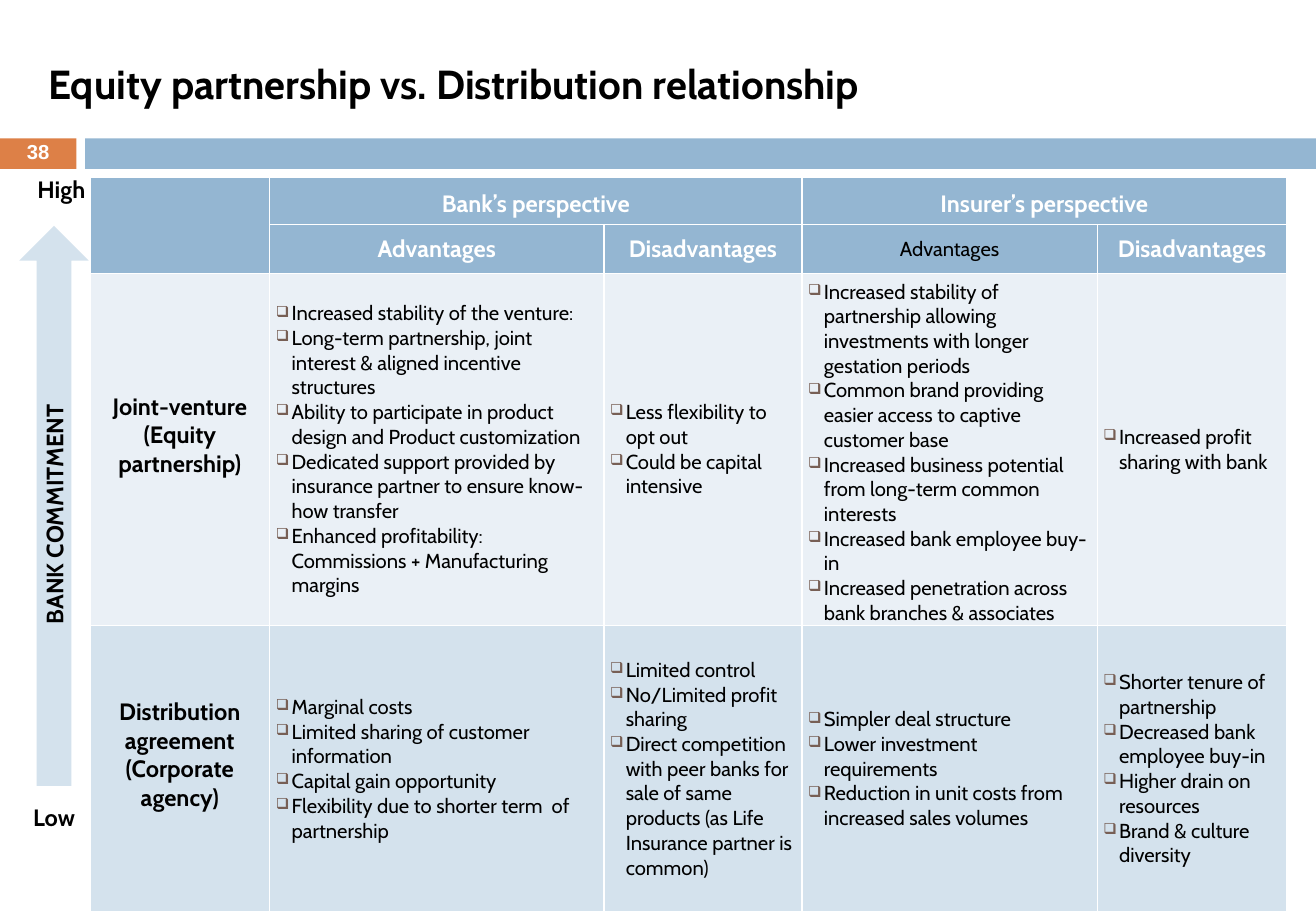
from lxml import etree
from pptx import Presentation
from pptx.dml.color import RGBColor
from pptx.enum.shapes import MSO_SHAPE
from pptx.enum.text import MSO_ANCHOR, PP_ALIGN
from pptx.oxml.ns import qn
from pptx.util import Inches, Pt

LEFT, CENTER = PP_ALIGN.LEFT, PP_ALIGN.CENTER
TOP, MIDDLE, BOTTOM = MSO_ANCHOR.TOP, MSO_ANCHOR.MIDDLE, MSO_ANCHOR.BOTTOM
RECTANGLE, UP_ARROW = MSO_SHAPE.RECTANGLE, MSO_SHAPE.UP_ARROW

BLACK = RGBColor(0x00, 0x00, 0x00)
WHITE = RGBColor(0xFF, 0xFF, 0xFF)
ORANGE = RGBColor(0xDD, 0x80, 0x47)
BLUE = RGBColor(0x94, 0xB6, 0xD2)
LIGHT_BLUE = RGBColor(0xD4, 0xE2, 0xED)
PALE_BLUE = RGBColor(0xEA, 0xF0, 0xF6)
BROWN = RGBColor(0x77, 0x5F, 0x55)

SLIDE_WIDTH, SLIDE_HEIGHT = 10.83, 7.5
BAND_TOP, BAND_HEIGHT = 1.14, 0.25
NUMBER_WIDTH, BAND_LEFT = 0.63, 0.7
TABLE_LEFT, TABLE_TOP = 0.74, 1.46
COLUMNS = [1.48, 2.75, 1.63, 2.43, 1.56]
ROWS = [0.39, 0.39, 2.9, 2.36]
CELL_INSET = 0.05
LABEL_LIFT = 0.23

PERSPECTIVES = {1: "Bank’s perspective", 3: "Insurer’s perspective"}
ASPECTS = ["Advantages", "Disadvantages", "Advantages", "Disadvantages"]
PLAIN_ASPECT = 3
MODELS = [
    (PALE_BLUE, ["Joint-venture", "(Equity partnership)"], [
        ["Increased stability of the venture:",
         "Long-term partnership, joint interest & aligned incentive structures",
         "Ability to participate in product design and Product customization",
         "Dedicated support provided by insurance partner to ensure know-how transfer",
         "Enhanced profitability: Commissions + Manufacturing margins"],
        ["Less flexibility to opt out",
         "Could be capital intensive"],
        ["Increased stability of partnership allowing investments with longer gestation periods",
         "Common brand providing easier access to captive customer base",
         "Increased business potential from long-term common interests",
         "Increased bank employee buy-in",
         "Increased penetration across bank branches & associates"],
        ["Increased profit sharing with bank"],
    ]),
    (LIGHT_BLUE, ["Distribution agreement", "(Corporate agency)"], [
        ["Marginal costs",
         "Limited sharing of customer information",
         "Capital gain opportunity",
         "Flexibility due to shorter term  of partnership"],
        ["Limited control",
         "No/Limited profit sharing",
         "Direct competition with peer banks for sale of same products "
         "(as Life Insurance partner is common)"],
        ["Simpler deal structure",
         "Lower investment requirements",
         "Reduction in unit costs from increased sales volumes"],
        ["Shorter tenure of partnership",
         "Decreased bank employee buy-in",
         "Higher drain on resources",
         "Brand & culture diversity"],
    ]),
]


def add_bullet(paragraph):
    properties = paragraph._p.get_or_add_pPr()
    properties.set("marL", str(Inches(0.13)))
    properties.set("indent", str(-Inches(0.13)))
    color = etree.SubElement(properties, qn("a:buClr"))
    etree.SubElement(color, qn("a:srgbClr"), val=str(BROWN))
    etree.SubElement(properties, qn("a:buSzPct"), val="75000")
    etree.SubElement(properties, qn("a:buChar"), char="❑")


def write(frame, lines, size=14, color=BLACK, bold=True, align=CENTER,
          font="Cabin", bullets=False):
    """Fill a text frame with one paragraph for each line."""
    frame.word_wrap = True
    for index, line in enumerate(lines):
        paragraph = frame.add_paragraph() if index else frame.paragraphs[0]
        paragraph.alignment = align
        if bullets:
            add_bullet(paragraph)
        run = paragraph.add_run()
        run.text = line
        run.font.name = font
        run.font.size = Pt(size)
        run.font.bold = bold
        run.font.color.rgb = color


def add_text_box(slide, box, text, anchor=TOP, **text_format):
    frame = slide.shapes.add_textbox(*map(Inches, box)).text_frame
    frame.vertical_anchor = anchor
    write(frame, [text], **text_format)


def add_block(slide, kind, box, fill):
    block = slide.shapes.add_shape(kind, *map(Inches, box))
    block.shadow.inherit = False
    block.fill.solid()
    block.fill.fore_color.rgb = fill
    block.line.fill.background()
    return block


def style_cell(cell, fill):
    """Give a cell white borders, a fill and equal insets."""
    properties = cell._tc.get_or_add_tcPr()
    for side in ("a:lnL", "a:lnR", "a:lnT", "a:lnB"):
        border = etree.SubElement(properties, qn(side), w=str(Pt(1)))
        solid = etree.SubElement(border, qn("a:solidFill"))
        etree.SubElement(solid, qn("a:srgbClr"), val=str(WHITE))
    cell.fill.solid()
    cell.fill.fore_color.rgb = fill
    cell.margin_left = cell.margin_right = Inches(CELL_INSET)
    cell.margin_top = cell.margin_bottom = Inches(CELL_INSET)
    cell.vertical_anchor = MIDDLE


def add_comparison(slide):
    table = slide.shapes.add_table(
        len(ROWS), len(COLUMNS), Inches(TABLE_LEFT), Inches(TABLE_TOP),
        Inches(sum(COLUMNS)), Inches(sum(ROWS))).table
    table.first_row = table.horz_banding = False
    for column, width in zip(table.columns, COLUMNS):
        column.width = Inches(width)
    row_fills = [BLUE, BLUE] + [fill for fill, _, _ in MODELS]
    for index, (row, height) in enumerate(zip(table.rows, ROWS)):
        row.height = Inches(height)
        for cell in row.cells:
            style_cell(cell, row_fills[index])

    table.cell(0, 0).merge(table.cell(1, 0))
    for column, perspective in PERSPECTIVES.items():
        heading = table.cell(0, column)
        heading.merge(table.cell(0, column + 1))
        heading.vertical_anchor = BOTTOM
        write(heading.text_frame, [perspective], color=WHITE)
    for column, aspect in enumerate(ASPECTS, start=1):
        plain = column == PLAIN_ASPECT
        write(table.cell(1, column).text_frame, [aspect], bold=not plain,
              size=12 if plain else 14, color=BLACK if plain else WHITE)
    for row, (_, label, points) in enumerate(MODELS, start=2):
        label_cell = table.cell(row, 0)
        label_cell.margin_bottom = Inches(CELL_INSET + LABEL_LIFT)
        write(label_cell.text_frame, label)
        for column, items in enumerate(points, start=1):
            write(table.cell(row, column).text_frame, items, size=12,
                  bold=False, align=LEFT, bullets=True)


def add_header(slide):
    add_text_box(slide, (0.3, 0.27, 10.11, 0.83),
                 "Equity partnership vs. Distribution relationship",
                 anchor=MIDDLE, size=24, align=LEFT)
    number = add_block(slide, RECTANGLE,
                       (0, BAND_TOP, NUMBER_WIDTH, BAND_HEIGHT), ORANGE)
    number.text_frame.margin_top = 0
    number.text_frame.margin_bottom = Inches(0.04)
    write(number.text_frame, ["38"], size=12, color=WHITE, font="Arial")
    add_block(slide, RECTANGLE,
              (BAND_LEFT, BAND_TOP, SLIDE_WIDTH - BAND_LEFT, BAND_HEIGHT), BLUE)


def add_commitment_scale(slide):
    arrow = add_block(slide, UP_ARROW, (0.16, 1.86, 0.57, 4.61), LIGHT_BLUE)
    frame = arrow.text_frame
    frame.margin_left = frame.margin_right = 0
    frame.margin_top = frame.margin_bottom = 0
    frame._txBody.bodyPr.set("vert", "vert270")
    write(frame, ["BANK COMMITMENT"])
    add_text_box(slide, (0, 1.39, 1.01, 0.34), "High")
    add_text_box(slide, (0, 6.56, 0.89, 0.34), "Low")


def main():
    presentation = Presentation()
    presentation.slide_width = Inches(SLIDE_WIDTH)
    presentation.slide_height = Inches(SLIDE_HEIGHT)
    slide = presentation.slides.add_slide(presentation.slide_layouts[6])
    add_header(slide)
    add_comparison(slide)
    add_commitment_scale(slide)
    presentation.save("out.pptx")


if __name__ == "__main__":
    main()
